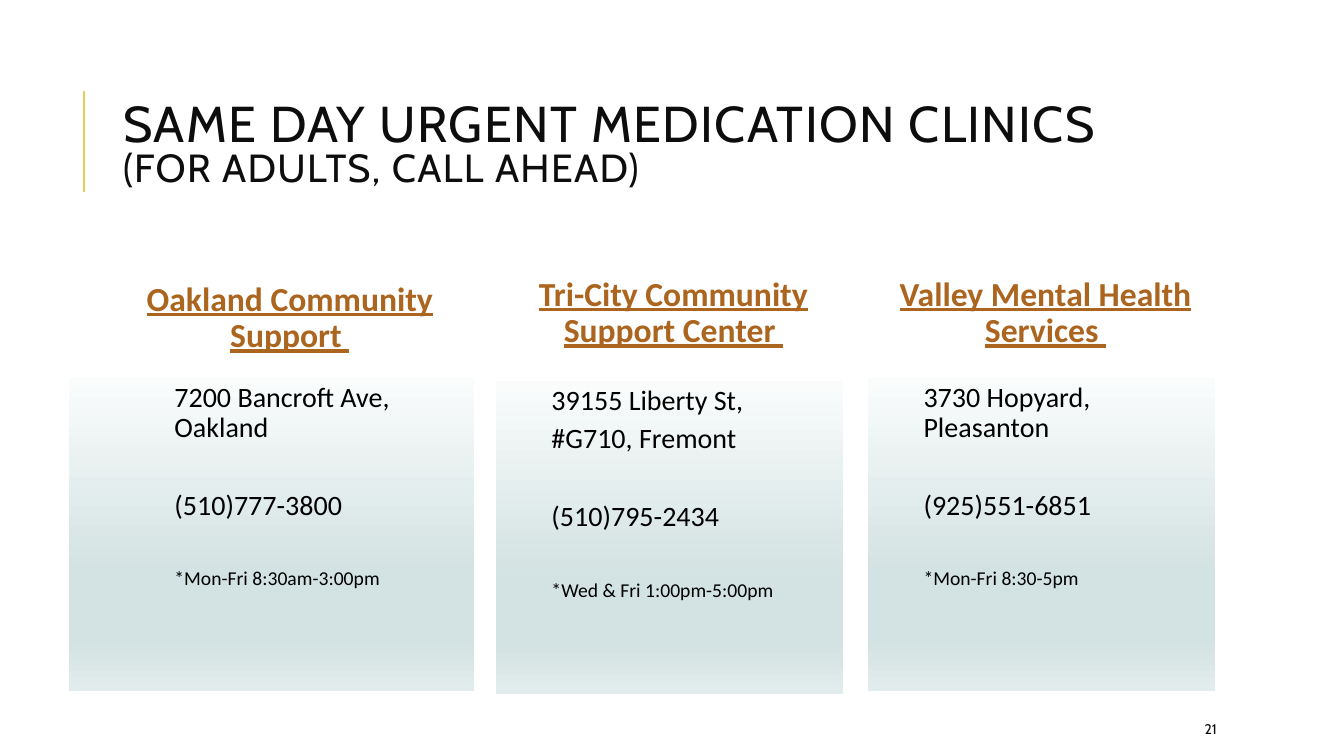
from dataclasses import dataclass

from pptx import Presentation
from pptx.dml.color import RGBColor
from pptx.enum.shapes import MSO_CONNECTOR, MSO_SHAPE
from pptx.enum.text import MSO_ANCHOR, MSO_AUTO_SIZE, PP_ALIGN
from pptx.oxml import parse_xml
from pptx.oxml.ns import nsdecls
from pptx.util import Pt

PX = 9144  # EMU per px, 100 px to the inch


@dataclass(frozen=True)
class Theme:
    ink: str = "0D0D0D"
    black: str = "000000"
    heading: str = "AB651E"
    rule: str = "E3CC5A"
    card_stops: tuple = ((0, "FAFCFC"), (63, "D3E2E2"), (83, "D3E2E2"), (100, "E2ECEC"))
    title_font: str = "Cabin"
    body_font: str = "Calibri"
    title_size: int = 36
    subtitle_size: int = 28
    heading_size: int = 24
    body_size: int = 20
    hours_size: int = 14
    number_size: int = 10


theme = Theme()


def style(run, font, size, color):
    run.font.name = font
    run.font.size = Pt(size)
    run.font.color.rgb = RGBColor.from_string(color)


def prepare(frame, anchor, inset):
    """Fix the frame's size, wrapping, anchor and, in px, its margins."""
    frame.word_wrap = True
    frame.auto_size = MSO_AUTO_SIZE.NONE
    frame.vertical_anchor = anchor
    frame.margin_left = frame.margin_right = inset * PX
    frame.margin_top = frame.margin_bottom = 5 * PX


prs = Presentation()
prs.slide_width, prs.slide_height = 1333 * PX, 750 * PX
slide = prs.slides.add_slide(prs.slide_layouts[5])
shapes = slide.shapes

# Title with its accent rule
accent = shapes.add_connector(MSO_CONNECTOR.STRAIGHT, 83 * PX, 190 * PX, 83 * PX, 90 * PX)
accent.line.color.rgb = RGBColor.from_string(theme.rule)
accent.line.width = Pt(1.5)
accent._element.spPr.append(parse_xml(f"<a:effectLst {nsdecls('a')}/>"))

title = shapes.title
title.left, title.top, title.width, title.height = 112 * PX, 64 * PX, 1063 * PX, 164 * PX
prepare(title.text_frame, MSO_ANCHOR.MIDDLE, 10)
title.text_frame.text = "SAME DAY URGENT MEDICATION CLINICS \v(FOR ADULTS, CALL AHEAD)"
title_line = title.text_frame.paragraphs[0]
title_line.alignment = PP_ALIGN.LEFT
title_line.line_spacing = 0.8
for run, size in zip(title_line.runs, (theme.title_size, theme.subtitle_size)):
    style(run, theme.title_font, size, theme.ink)
    run._r.get_or_add_rPr().set("spc", "100")

# Clinics: heading box and card as (left, top, width), then the card's text indent
CARD_HEIGHT, HEADING_HEIGHT = 311, 110
clinics = [
    ("Oakland Community Support ", (104, 247, 367), (68, 375, 402), 100,
     ["7200 Bancroft Ave, Oakland"], "(510)777-3800", "*Mon-Fri 8:30am-3:00pm"),
    ("Tri-City Community Support Center ", (496, 242, 344), (492, 378, 344), 50,
     ["39155 Liberty St,", "#G710, Fremont"], "(510)795-2434", "*Wed & Fri 1:00pm-5:00pm"),
    ("Valley Mental Health Services ", (865, 242, 344), (861, 375, 344), 50,
     ["3730 Hopyard, Pleasanton"], "(925)551-6851", "*Mon-Fri 8:30-5pm"),
]
stops = "".join(
    f'<a:gs pos="{pos * 1000}"><a:srgbClr val="{color}"/></a:gs>'
    for pos, color in theme.card_stops
)
gradient = (f"<a:gradFill {nsdecls('a')}><a:gsLst>{stops}</a:gsLst>"
            '<a:lin ang="5400000" scaled="0"/></a:gradFill>')

for name, heading_place, card_place, indent, address, phone, hours in clinics:
    left, top, width = heading_place
    heading = shapes.add_textbox(left * PX, top * PX, width * PX, HEADING_HEIGHT * PX)
    prepare(heading.text_frame, MSO_ANCHOR.BOTTOM, 5)
    heading.text_frame.text = name
    heading_line = heading.text_frame.paragraphs[0]
    heading_line.alignment = PP_ALIGN.CENTER
    heading_line.line_spacing = 0.9
    heading_run = heading_line.runs[0]
    style(heading_run, theme.body_font, theme.heading_size, theme.heading)
    heading_run.font.bold = heading_run.font.underline = True

    left, top, width = card_place
    card = shapes.add_shape(MSO_SHAPE.RECTANGLE, left * PX, top * PX, width * PX, CARD_HEIGHT * PX)
    card.shadow.inherit = False
    card.line.fill.background()
    card._element.spPr.find("{*}prstGeom").addnext(parse_xml(gradient))
    prepare(card.text_frame, MSO_ANCHOR.TOP, 5)
    card.text_frame.text = "\n".join([*address, phone, hours])
    for paragraph in card.text_frame.paragraphs:
        paragraph.alignment = PP_ALIGN.LEFT
        paragraph.line_spacing = 0.9
        opens_group = paragraph.text in (phone, hours)
        paragraph.space_before = Pt(30 if opens_group else 2)
        paragraph.space_after = Pt(4)
        properties = paragraph._p.get_or_add_pPr()
        properties.set("marL", str(indent * PX))
        properties.set("indent", "0")
        size = theme.hours_size if paragraph.text == hours else theme.body_size
        style(paragraph.runs[0], theme.body_font, size, theme.black)

page_number = shapes.add_textbox(1185 * PX, 708 * PX, 106 * PX, 30 * PX)
prepare(page_number.text_frame, MSO_ANCHOR.MIDDLE, 10)
page_number.text_frame.text = "21"
style(page_number.text_frame.paragraphs[0].runs[0], theme.title_font, theme.number_size, theme.ink)

prs.save("out.pptx")
